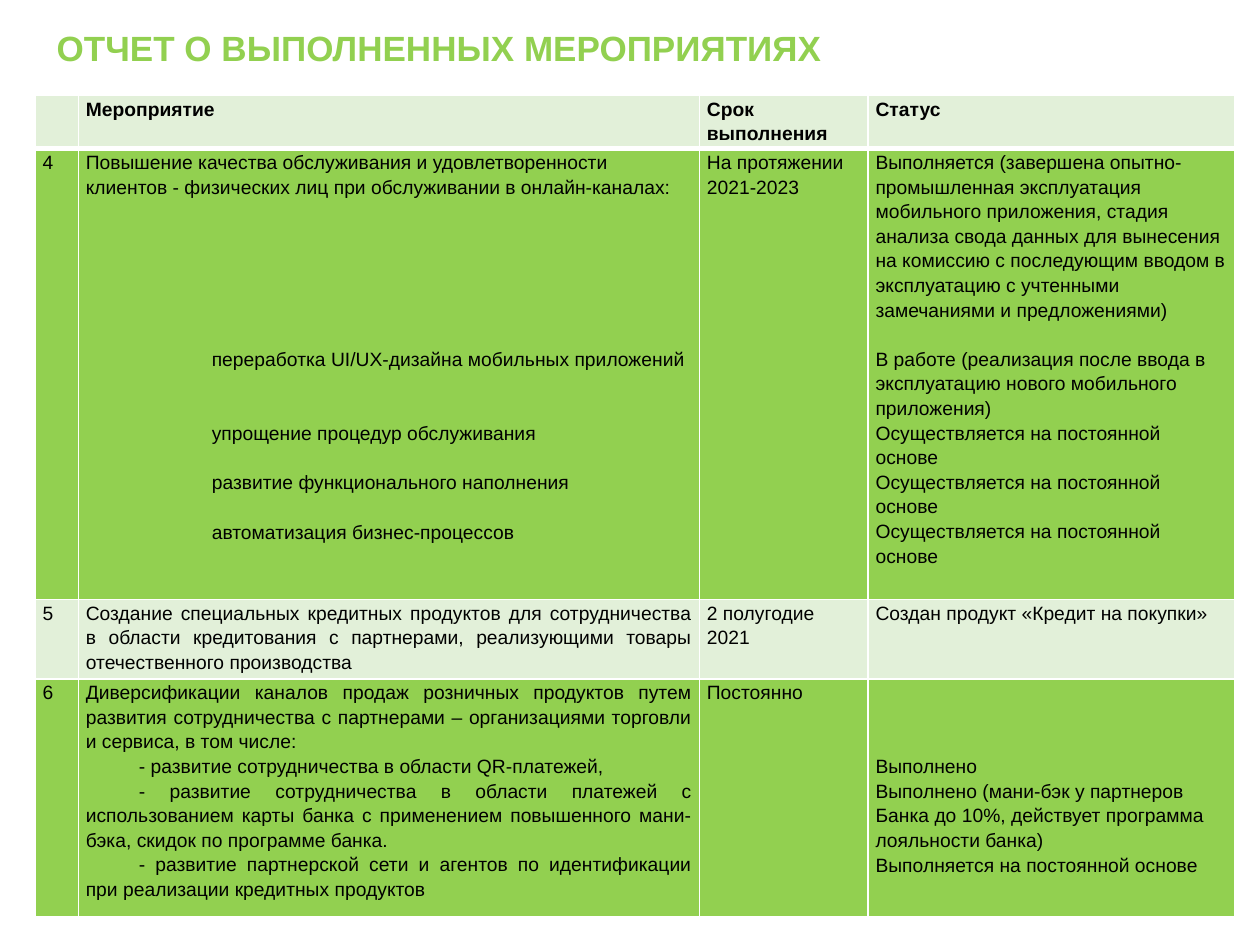
from dataclasses import dataclass
from typing import Optional

from lxml.etree import SubElement
from pptx import Presentation
from pptx.dml.color import RGBColor
from pptx.enum.text import MSO_ANCHOR, MSO_AUTO_SIZE, PP_ALIGN
from pptx.oxml.ns import qn
from pptx.util import Cm, Pt


@dataclass(frozen=True)
class Theme:
    font: str = "Arial"
    title_size: float = 20
    body_size: float = 11
    line_pitch: float = 14.1
    green: str = "92D050"
    pale: str = "E2F0D9"
    white: str = "FFFFFF"
    black: str = "000000"


THEME = Theme()


@dataclass(frozen=True)
class Line:
    text: str
    indent: float = 0
    lines_before: int = 0
    justify: bool = False


@dataclass(frozen=True)
class Entry:
    lines: tuple[Line, ...] = ()
    lines_above: int = 0


@dataclass(frozen=True)
class Activity:
    height: float
    fill: str
    entries: tuple[Entry, ...]
    header: bool = False


def entry(*lines: Line | str, lines_above: int = 0) -> Entry:
    return Entry(tuple(Line(line) if isinstance(line, str) else line for line in lines), lines_above)


ONGOING = "Осуществляется на постоянной основе"
STEP = 2.54
SUBITEM = 1.07
COLUMN_WIDTHS = (0.87, 12.52, 3.4, 7.4)

ACTIVITIES = (
    Activity(1.07, THEME.pale, (
        entry(), entry("Мероприятие"), entry("Срок выполнения"), entry("Статус"),
    ), header=True),
    Activity(9.09, THEME.green, (
        entry("4"),
        entry(
            "Повышение качества обслуживания и удовлетворенности клиентов - физических лиц "
            "при обслуживании в онлайн-каналах:",
            Line("переработка UI/UX-дизайна мобильных приложений", STEP, 6),
            Line("упрощение процедур обслуживания", STEP, 2),
            Line("развитие функционального наполнения", STEP, 1),
            Line("автоматизация бизнес-процессов", STEP, 1),
        ),
        entry("На протяжении 2021-2023"),
        entry(
            "Выполняется (завершена опытно-промышленная эксплуатация мобильного приложения, "
            "стадия анализа свода данных для вынесения на комиссию с последующим вводом в "
            "эксплуатацию с учтенными замечаниями и предложениями)",
            Line("В работе (реализация после ввода в эксплуатацию нового мобильного приложения)",
                 lines_before=1),
            ONGOING, ONGOING, ONGOING,
        ),
    )),
    Activity(1.6, THEME.pale, (
        entry("5"),
        entry(Line(
            "Создание специальных кредитных продуктов для сотрудничества в области кредитования "
            "с партнерами, реализующими товары отечественного производства", justify=True)),
        entry("2 полугодие 2021"),
        entry("Создан продукт «Кредит на покупки»"),
    )),
    Activity(4.8, THEME.green, (
        entry("6"),
        entry(
            Line("Диверсификации каналов продаж розничных продуктов путем развития сотрудничества "
                 "с партнерами – организациями торговли и сервиса, в том числе:", justify=True),
            Line("- развитие сотрудничества в области QR-платежей,", SUBITEM, justify=True),
            Line("- развитие сотрудничества в области платежей с использованием карты банка "
                 "с применением повышенного мани-бэка, скидок по программе банка.",
                 SUBITEM, justify=True),
            Line("- развитие партнерской сети и агентов по идентификации при реализации "
                 "кредитных продуктов", SUBITEM, justify=True),
        ),
        entry("Постоянно"),
        entry(
            "Выполнено",
            "Выполнено (мани-бэк у партнеров Банка до 10%, действует программа лояльности банка)",
            "Выполняется на постоянной основе",
            lines_above=3,
        ),
    )),
)


def write(paragraph, text: str, *, size: float = THEME.body_size, color: str = THEME.black,
          bold: bool = False, align: PP_ALIGN = PP_ALIGN.LEFT, spacing: float = 1.15,
          before: Optional[float] = None, indent: float = 0) -> None:
    paragraph.alignment = align
    paragraph.line_spacing = spacing
    if before:
        paragraph.space_before = Pt(before)
    if indent:
        properties = paragraph._p.get_or_add_pPr()
        properties.set("marL", "0")
        properties.set("indent", str(Cm(indent)))
    run = paragraph.add_run()
    run.text = text
    run.font.name = THEME.font
    run.font.size = Pt(size)
    run.font.bold = bold
    run.font.color.rgb = RGBColor.from_string(color)


def draw_borders(cell, bottom: float) -> None:
    properties = cell._tc.get_or_add_tcPr()
    for side, width in (("lnL", 1), ("lnR", 1), ("lnT", 1), ("lnB", bottom)):
        border = SubElement(properties, qn(f"a:{side}"), w=str(Pt(width)))
        SubElement(SubElement(border, qn("a:solidFill")), qn("a:srgbClr"), val=THEME.white)


def draw_cell(cell, content: Entry, fill: str, header: bool) -> None:
    cell.margin_left = cell.margin_right = Cm(0.15)
    cell.margin_top = Pt(content.lines_above * THEME.line_pitch)
    cell.margin_bottom = 0
    draw_borders(cell, bottom=3 if header else 1)
    cell.fill.solid()
    cell.fill.fore_color.rgb = RGBColor.from_string(fill)
    frame = cell.text_frame
    for number, line in enumerate(content.lines):
        write(frame.add_paragraph() if number else frame.paragraphs[0], line.text, bold=header,
              align=PP_ALIGN.JUSTIFY if line.justify else PP_ALIGN.LEFT,
              before=line.lines_before * THEME.line_pitch, indent=line.indent)


def draw_title(slide, text: str) -> None:
    title = slide.shapes.title
    title.left, title.top, title.width, title.height = Cm(0.89), Cm(0.38), Cm(22.43), Cm(1.14)
    frame = title.text_frame
    frame.word_wrap = True
    frame.auto_size = MSO_AUTO_SIZE.NONE
    frame.vertical_anchor = MSO_ANCHOR.BOTTOM
    write(frame.paragraphs[0], text, size=THEME.title_size, color=THEME.green,
          bold=True, spacing=0.9)


def draw_report(slide, activities: tuple[Activity, ...]) -> None:
    report = slide.shapes.add_table(
        len(activities), len(COLUMN_WIDTHS), Cm(0.71), Cm(1.93),
        Cm(sum(COLUMN_WIDTHS)), Cm(sum(activity.height for activity in activities))).table
    report.horz_banding = False
    for column, width in zip(report.columns, COLUMN_WIDTHS):
        column.width = Cm(width)
    for row, activity in zip(report.rows, activities):
        row.height = Cm(activity.height)
        for cell, content in zip(row.cells, activity.entries):
            draw_cell(cell, content, activity.fill, activity.header)


def main() -> None:
    presentation = Presentation()
    presentation.slide_width, presentation.slide_height = Cm(25.4), Cm(19.05)
    slide = presentation.slides.add_slide(presentation.slide_layouts[5])
    draw_title(slide, "ОТЧЕТ О ВЫПОЛНЕННЫХ МЕРОПРИЯТИЯХ")
    draw_report(slide, ACTIVITIES)
    presentation.save("out.pptx")


if __name__ == "__main__":
    main()
